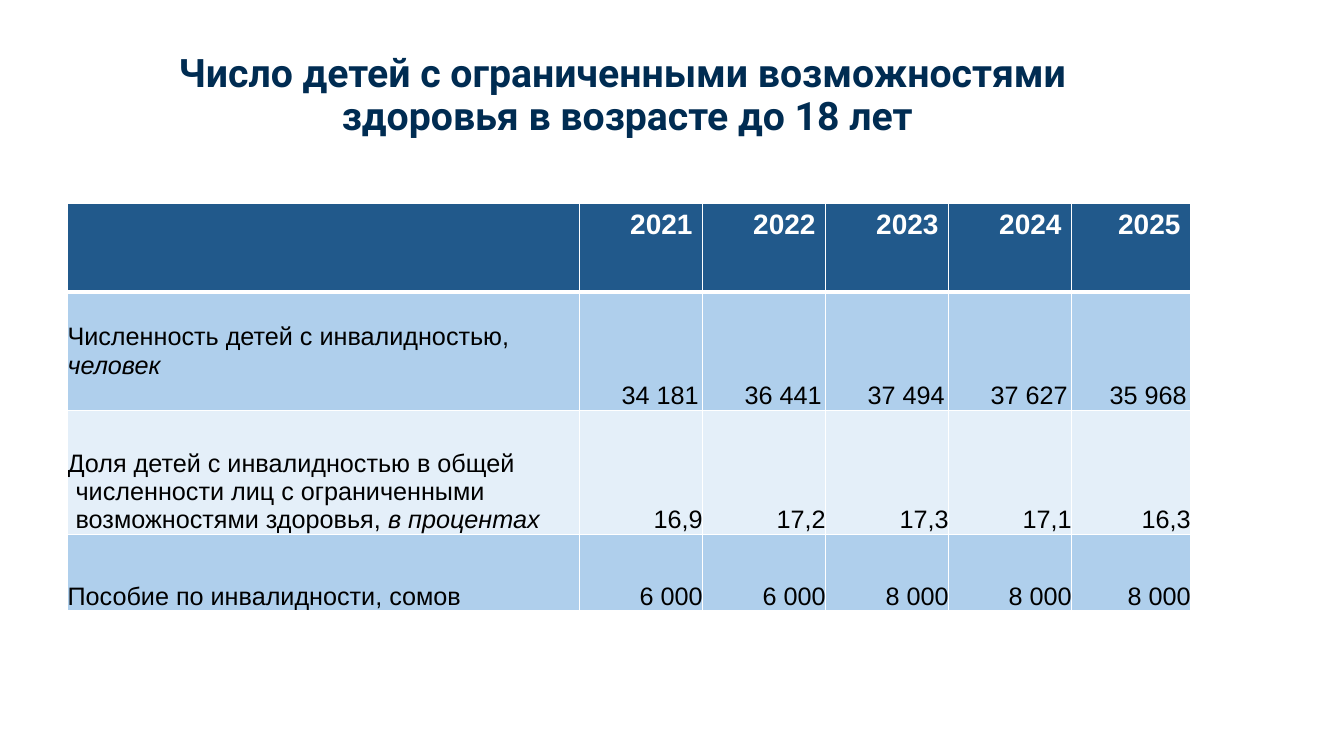
from lxml.etree import SubElement
from pptx import Presentation
from pptx.dml.color import RGBColor
from pptx.enum.text import MSO_ANCHOR, MSO_AUTO_SIZE, PP_ALIGN
from pptx.oxml import parse_xml
from pptx.oxml.ns import nsdecls, qn
from pptx.util import Inches, Pt

NAVY, HEADER, BLUE, PALE = "002C52", "21598B", "AFCFEC", "E4EFF9"
WHITE, BLACK = "FFFFFF", "000000"

TITLE_LINES = ["Число детей с ограниченными возможностями ", "здоровья в возрасте до 18 лет"]
YEARS = ["2021", "2022", "2023", "2024", "2025"]
INDICATORS = [
    (["Численность детей с инвалидностью, ", "человек"],
     ["34 181", "36 441", "37 494", "37 627", "35 968"]),
    (["Доля детей с инвалидностью в общей численности лиц с ограниченными "
      "возможностями здоровья, ", "в процентах"],
     ["16,9", "17,2", "17,3", "17,1", "16,3"]),
    (["Пособие по инвалидности, сомов"],
     ["6 000", "6 000", "8 000", "8 000", "8 000"]),
]
COLUMN_WIDTHS = [5.08, 1.22, 1.22, 1.22, 1.22, 1.18]
ROW_HEIGHTS = [0.88, 1.17, 1.23, 0.76]


def color(value):
    return RGBColor.from_string(value)


class SlideBuilder:
    """Holds the slide and its style, and adds the title and the table."""

    def __init__(self, slide):
        self.slide = slide
        self.title_font = "Roboto"
        self.body_font = "Arial"

    def add_run(self, paragraph, text, font, size, fill, bold=False, italic=False):
        run = paragraph.add_run()
        run.text = text
        run.font.name = font
        run.font.size = Pt(size)
        run.font.color.rgb = color(fill)
        run.font.bold = bold
        run.font.italic = italic

    def add_title(self, lines, left, top, width, height):
        title = self.slide.shapes.title
        title.left, title.top = Inches(left), Inches(top)
        title.width, title.height = Inches(width), Inches(height)
        frame = title.text_frame
        frame.word_wrap = True
        frame.auto_size = MSO_AUTO_SIZE.NONE
        frame.vertical_anchor = MSO_ANCHOR.MIDDLE
        paragraph = frame.paragraphs[0]
        paragraph.alignment = PP_ALIGN.CENTER
        paragraph.line_spacing = 0.9
        for index, line in enumerate(lines):
            if index:
                paragraph.add_line_break()
            self.add_run(paragraph, line, self.title_font, 28, NAVY, bold=True)

    def add_table(self, left, top, widths, heights):
        frame = self.slide.shapes.add_table(
            len(heights), len(widths), Inches(left), Inches(top),
            Inches(sum(widths)), Inches(sum(heights)))
        table = frame.table
        table.horz_banding = False
        for column, width in zip(table.columns, widths):
            column.width = Inches(width)
        for row, height in zip(table.rows, heights):
            row.height = Inches(height)
        return table

    def style_cell(self, cell, fill, anchor, side=0, end=0, top_line=1, bottom_line=1):
        cell.fill.solid()
        cell.fill.fore_color.rgb = color(fill)
        cell.vertical_anchor = anchor
        cell.margin_left, cell.margin_right = Inches(side), Inches(end)
        cell.margin_top = cell.margin_bottom = Inches(side / 2)
        properties = cell._tc.get_or_add_tcPr()
        borders = [("lnL", 1), ("lnR", 1), ("lnT", top_line), ("lnB", bottom_line)]
        for index, (name, points) in enumerate(borders):
            line = parse_xml(f'<a:{name} {nsdecls("a")} w="{Pt(points)}"/>')
            solid = SubElement(line, qn("a:solidFill"))
            SubElement(solid, qn("a:srgbClr"), val=WHITE)
            properties.insert(index, line)

    def fill_header(self, cells, years):
        for cell, year in zip(cells, [""] + years):
            self.style_cell(cell, HEADER, MSO_ANCHOR.TOP, side=0.1, end=0.1, bottom_line=3)
            if year:
                paragraph = cell.text_frame.paragraphs[0]
                paragraph.alignment = PP_ALIGN.RIGHT
                self.add_run(paragraph, year, self.body_font, 20, WHITE, bold=True)

    def fill_row(self, cells, label, values, fill, label_anchor, end, top_line, hanging):
        label_cell, *value_cells = cells
        self.style_cell(label_cell, fill, label_anchor, top_line=top_line)
        paragraph = label_cell.text_frame.paragraphs[0]
        if hanging:
            properties = paragraph._p.get_or_add_pPr()
            properties.set("marL", str(Inches(hanging)))
            properties.set("indent", str(-Inches(hanging)))
        for index, text in enumerate(label):
            self.add_run(paragraph, text, self.body_font, 18, BLACK, italic=index > 0)
        for cell, value in zip(value_cells, values):
            self.style_cell(cell, fill, MSO_ANCHOR.BOTTOM, end=end, top_line=top_line)
            paragraph = cell.text_frame.paragraphs[0]
            paragraph.alignment = PP_ALIGN.RIGHT
            self.add_run(paragraph, value, self.body_font, 18, BLACK)


def main():
    presentation = Presentation()
    presentation.slide_width = Inches(13.33)
    presentation.slide_height = Inches(7.5)
    slide = presentation.slides.add_slide(presentation.slide_layouts[5])
    builder = SlideBuilder(slide)
    builder.add_title(TITLE_LINES, 1.22, 0.43, 10, 1.05)
    table = builder.add_table(0.67, 2.02, COLUMN_WIDTHS, ROW_HEIGHTS)
    header, *body = table.rows
    builder.fill_header(header.cells, YEARS)
    row_styles = [
        (BLUE, MSO_ANCHOR.MIDDLE, 0.04, 3, 0),
        (PALE, MSO_ANCHOR.BOTTOM, 0, 1, 0.08),
        (BLUE, MSO_ANCHOR.BOTTOM, 0, 1, 0),
    ]
    for row, (label, values), style in zip(body, INDICATORS, row_styles):
        builder.fill_row(row.cells, label, values, *style)
    presentation.save("out.pptx")


if __name__ == "__main__":
    main()
